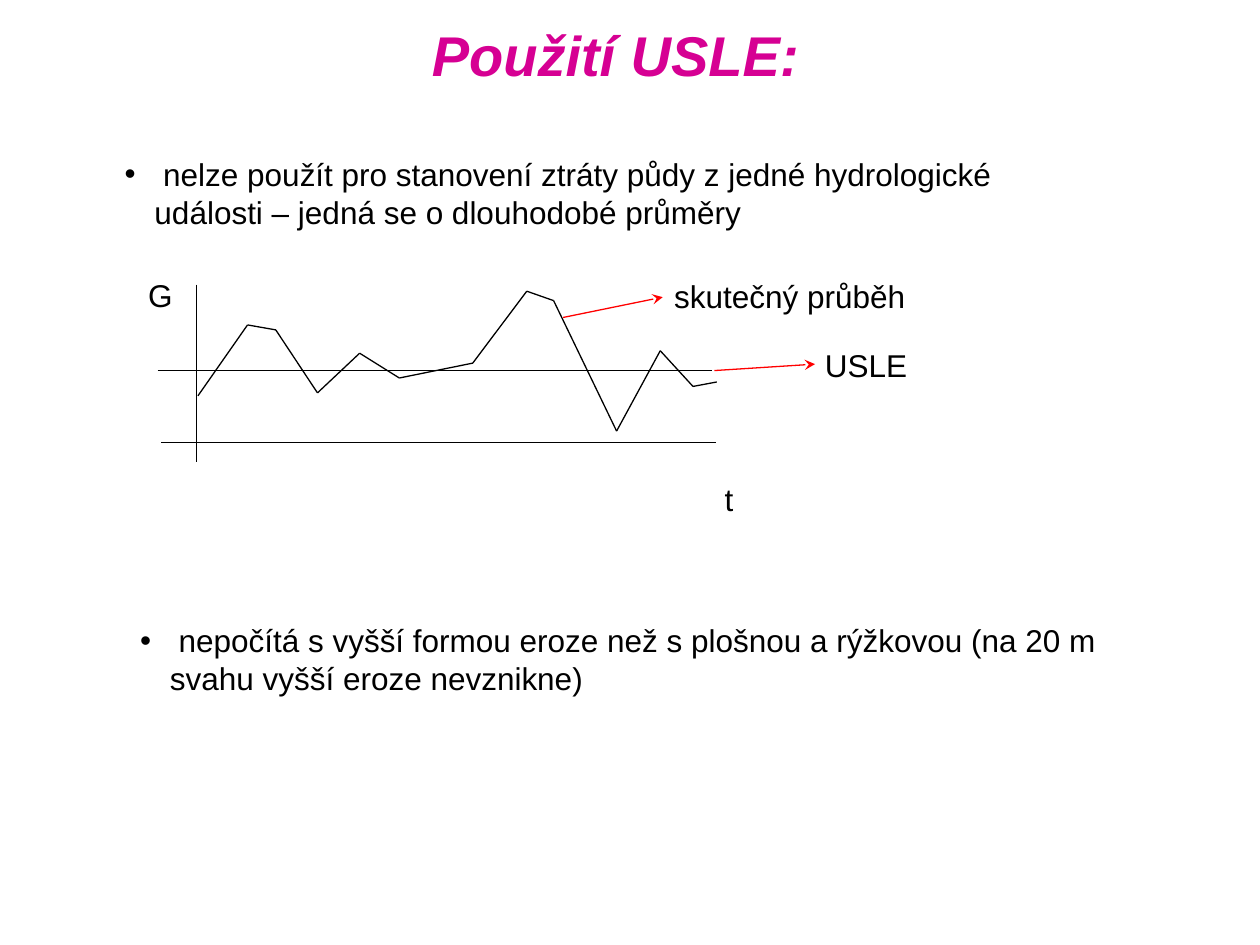
from dataclasses import dataclass
from itertools import pairwise

from lxml import etree
from pptx import Presentation
from pptx import util as u
from pptx.dml.color import RGBColor
from pptx.enum import shapes, text
from pptx.oxml.ns import qn


@dataclass(frozen=True)
class Theme:
    font: str = "Arial"
    title_color: str = "D60093"
    ink: str = "000000"
    accent: str = "FF0000"
    title_size: int = 32
    text_size: int = 18
    line_width: float = 0.75
    bullet_indent: float = 0.6


THEME = Theme()
LEFT, CENTER = text.PP_ALIGN.LEFT, text.PP_ALIGN.CENTER

# Lengths in cm; each axis or pointer is (start, end).
AXES = [
    ((3.96, 5.74), (3.96, 9.32)),
    ((3.25, 8.92), (14.43, 8.92)),
]
USLE_MEAN = ((3.18, 7.47), (14.35, 7.47))
REAL_COURSE = [
    (3.99, 7.98), (4.99, 6.55), (5.56, 6.65), (6.4, 7.92), (7.25, 7.12),
    (8.05, 7.62), (9.53, 7.32), (10.62, 5.87), (11.16, 6.06),
    (12.43, 8.69), (13.31, 7.07), (13.97, 7.79), (14.45, 7.7),
]
POINTERS = [
    ((11.35, 6.4), (13.36, 5.99)),
    ((14.4, 7.47), (16.43, 7.34)),
]
LABELS = [
    ("G", (2.69, 5.44, 1.09, 1.02), CENTER),
    ("t", (14.25, 9.55, 0.89, 1.02), CENTER),
    ("skutečný průběh", (13.34, 5.46, 6.45, 1.02), LEFT),
    ("USLE", (16.38, 6.86, 5.92, 1.02), LEFT),
]
BULLETS = [
    (" nelze použít pro stanovení ztráty půdy z jedné hydrologické události"
     " – jedná se o dlouhodobé průměry", (2.26, 3, 19.43, 1.78)),
    (" nepočítá s vyšší formou eroze než s plošnou a rýžkovou (na 20 m"
     " svahu vyšší eroze nevznikne)", (2.57, 12.4, 21.31, 1.78)),
]


def set_all(target, values):
    for name, value in values.items():
        setattr(target, name, value)


def write(shape, wording, box, align=LEFT, size=THEME.text_size,
          color=THEME.ink, bold=False, italic=False, bullet=False):
    """Place a text shape and fill it with one formatted paragraph."""
    set_all(shape, dict(zip(("left", "top", "width", "height"),
                            map(u.Cm, box))))
    frame = shape.text_frame
    frame.text = wording
    set_all(frame, {"word_wrap": True,
                    "auto_size": text.MSO_AUTO_SIZE.SHAPE_TO_FIT_TEXT,
                    "vertical_anchor": text.MSO_ANCHOR.TOP})
    paragraph = frame.paragraphs[0]
    if bullet:
        add_bullet(paragraph)
    set_all(paragraph, {"alignment": align, "space_before": u.Pt(0)})
    set_all(paragraph.font, {"name": THEME.font, "size": u.Pt(size),
                             "bold": bold, "italic": italic})
    paragraph.font.color.rgb = RGBColor.from_string(color)


def add_bullet(paragraph):
    properties = paragraph._p.get_or_add_pPr()
    indent = u.Cm(THEME.bullet_indent)
    properties.set("marL", str(indent))
    properties.set("indent", str(-indent))
    etree.SubElement(properties, qn("a:buChar"), char="•")


def add_line(slide, start, end, color=THEME.ink, arrow=False):
    line = slide.shapes.add_connector(
        shapes.MSO_CONNECTOR.STRAIGHT, *map(u.Cm, (*start, *end)))
    line.line.color.rgb = RGBColor.from_string(color)
    line.line.width = u.Pt(THEME.line_width)
    properties = line.element.spPr
    if arrow:
        etree.SubElement(properties.find(qn("a:ln")), qn("a:tailEnd"),
                         type="stealth")
    etree.SubElement(properties, qn("a:effectLst"))


def add_label(slide, wording, box, align):
    write(slide.shapes.add_textbox(0, 0, 0, 0), wording, box, align)


def draw_diagram(slide):
    for start, end in [*AXES, USLE_MEAN, *pairwise(REAL_COURSE)]:
        add_line(slide, start, end)
    for start, end in POINTERS:
        add_line(slide, start, end, THEME.accent, arrow=True)
    for label in LABELS:
        add_label(slide, *label)


def main():
    deck = Presentation()
    set_all(deck, {"slide_width": u.Cm(25.4), "slide_height": u.Cm(19.05)})
    two_content = deck.slide_layouts[3]
    slide = deck.slides.add_slide(two_content)
    title, *bodies = slide.placeholders
    write(title, "Použití USLE:", (6.91, 0.28, 11, 1.6), CENTER,
          THEME.title_size, THEME.title_color, bold=True, italic=True)
    for body, (wording, box) in zip(bodies, BULLETS):
        write(body, wording, box, bullet=True)
    draw_diagram(slide)
    deck.save("out.pptx")


if __name__ == "__main__":
    main()
